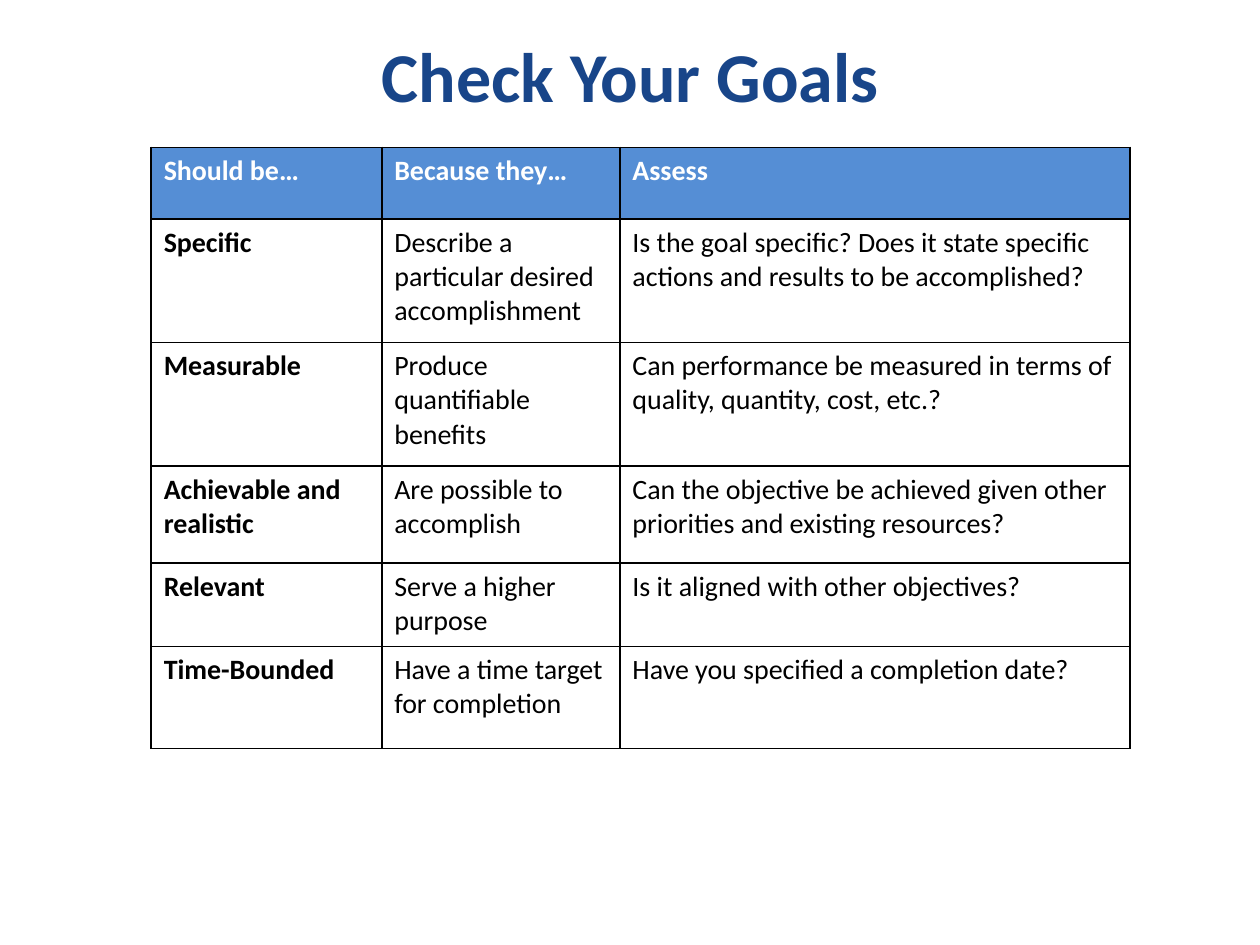
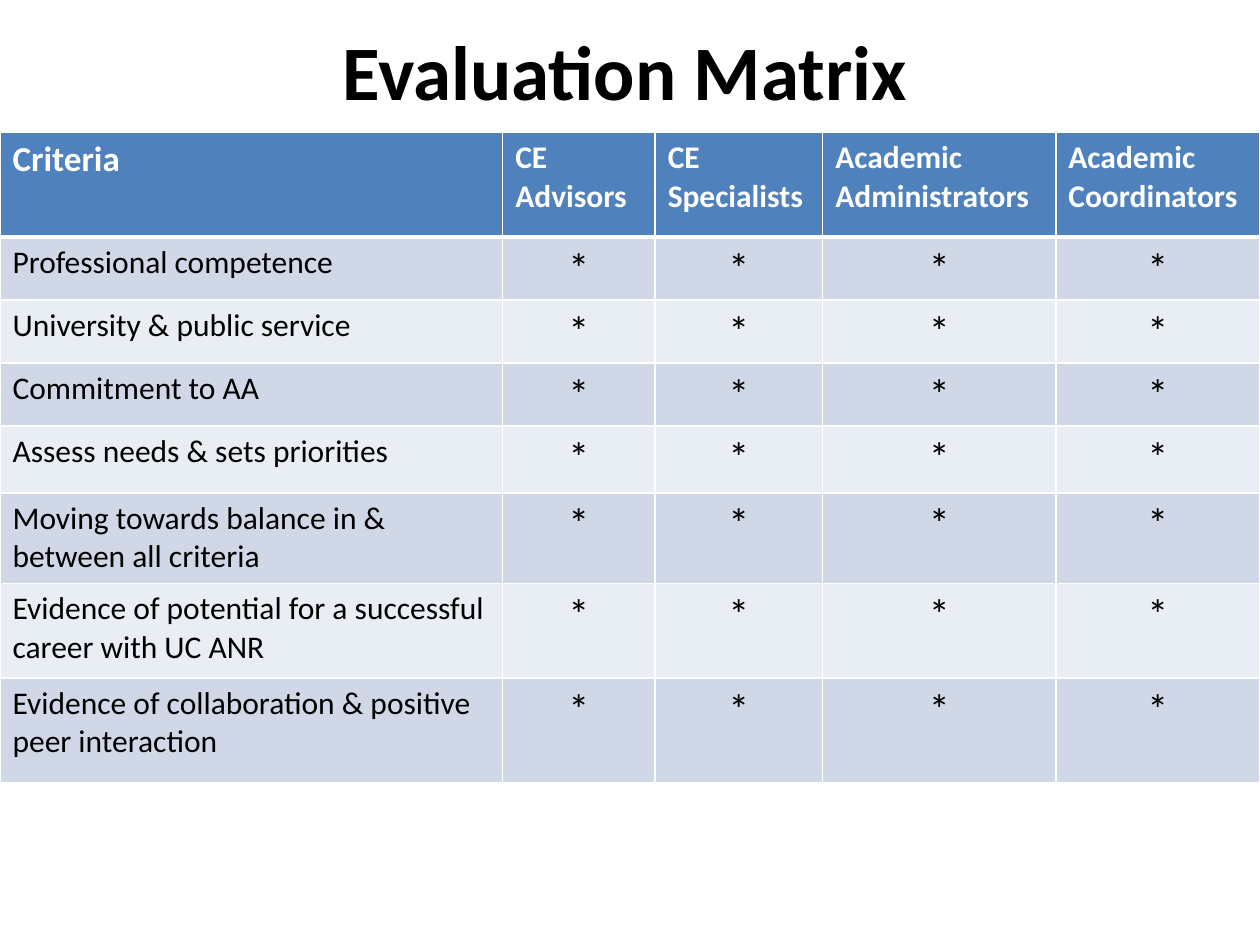
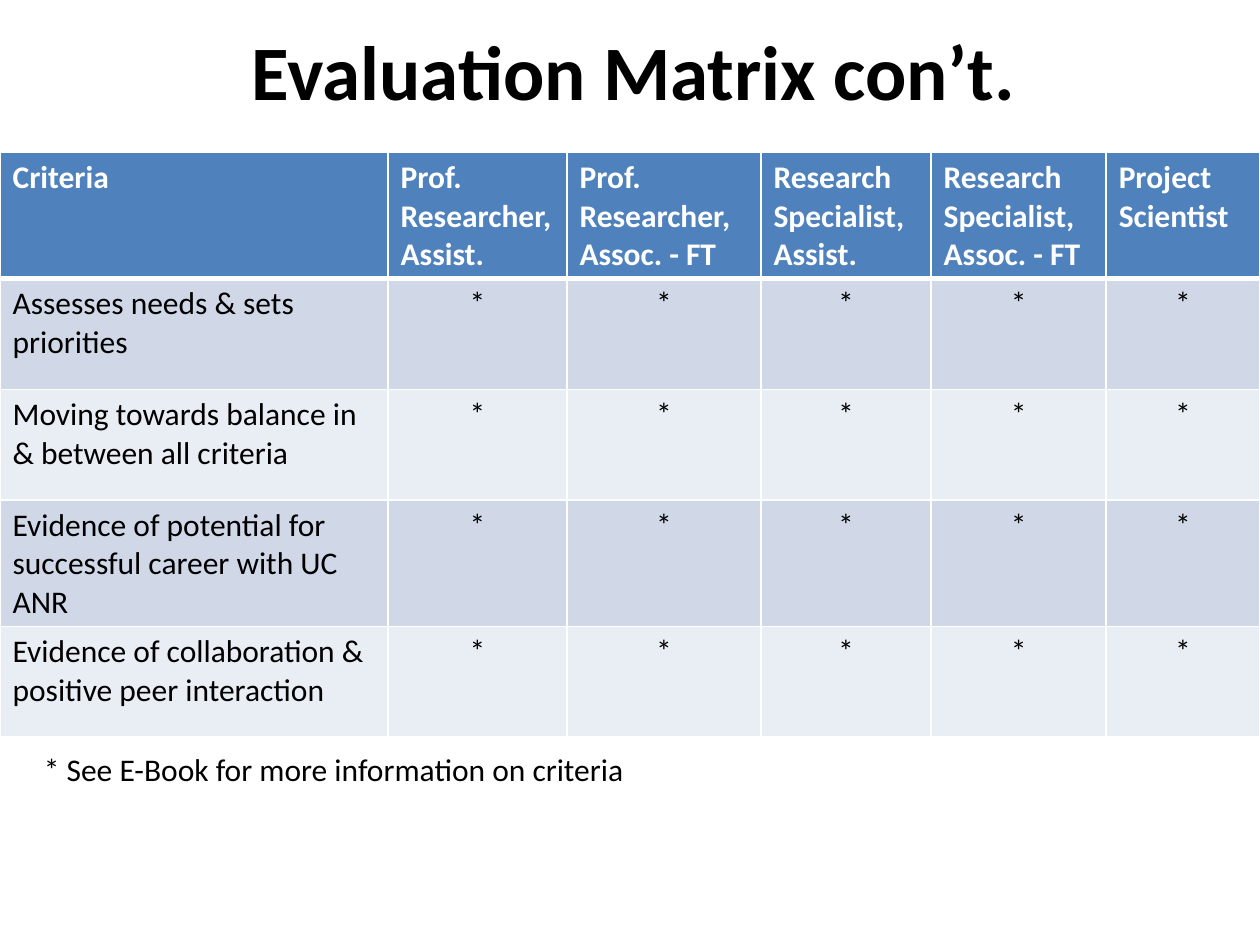
from dataclasses import dataclass

from lxml import etree
from pptx import Presentation
from pptx.dml.color import RGBColor
from pptx.enum.text import MSO_ANCHOR, MSO_AUTO_SIZE, PP_ALIGN
from pptx.oxml.ns import qn
from pptx.util import Inches, Pt

LEFT, CENTER = PP_ALIGN.LEFT, PP_ALIGN.CENTER
MIDDLE, TOP = MSO_ANCHOR.MIDDLE, MSO_ANCHOR.TOP
GROW = MSO_AUTO_SIZE.SHAPE_TO_FIT_TEXT

FONT = "Calibri"
BLACK, WHITE, NAVY = "000000", "FFFFFF", "184589"
MATRIX_BANDS = ("D0D8E8", "E9EDF4")
MARK = "*"


@dataclass(frozen=True)
class TextStyle:
    size: float
    color: str = BLACK
    bold: bool = False
    align: PP_ALIGN = LEFT


@dataclass(frozen=True)
class TableDesign:
    header_fill: str
    bands: tuple[str, ...]
    border: str
    header_rule: float
    header: TextStyle
    corner: TextStyle
    first_column: TextStyle
    body: TextStyle


@dataclass(frozen=True)
class TableLayout:
    left: float
    top: float
    columns: list[float]
    rows: list[float]


GOALS_DESIGN = TableDesign(
    "558ED5", (), BLACK, 1,
    header=TextStyle(16, WHITE, True), corner=TextStyle(16, WHITE, True),
    first_column=TextStyle(16, bold=True), body=TextStyle(16))


def matrix_design(corner_size: float, mark_size: float) -> TableDesign:
    return TableDesign(
        "4F81BD", MATRIX_BANDS, WHITE, 3,
        header=TextStyle(18, WHITE, True), corner=TextStyle(corner_size, WHITE, True),
        first_column=TextStyle(18), body=TextStyle(mark_size, align=CENTER))


GOALS = [
    ["Should be…", "Because they…", "Assess"],
    ["Specific", "Describe a particular desired accomplishment",
     "Is the goal specific? Does it state specific actions and results to be accomplished?"],
    ["Measurable", "Produce quantifiable benefits",
     "Can performance be measured in terms of quality, quantity, cost, etc.?"],
    ["Achievable and realistic", "Are possible to accomplish",
     "Can the objective be achieved given other priorities and existing resources?"],
    ["Relevant", "Serve a higher purpose", "Is it aligned with other objectives?"],
    ["Time-Bounded", "Have a time target for completion",
     "Have you specified a completion date?"],
]
ACADEMIC_ROLES = ["CE Advisors", "CE Specialists",
                  "Academic Administrators", "Academic Coordinators"]
ACADEMIC_CRITERIA = [
    "Professional competence",
    "University & public service",
    "Commitment to AA",
    "Assess needs & sets priorities",
    "Moving towards balance in & between all criteria",
    "Evidence of potential for a successful career with UC ANR",
    "Evidence of collaboration & positive peer interaction",
]
RESEARCH_ROLES = ["Prof. Researcher, Assist.", "Prof. Researcher, Assoc. - FT",
                  "Research Specialist, Assist.", "Research Specialist, Assoc. - FT",
                  "Project Scientist"]
RESEARCH_CRITERIA = [
    "Assesses needs & sets priorities",
    "Moving towards balance in & between all criteria",
    "Evidence of potential for successful career with UC ANR",
    "Evidence of collaboration & positive peer interaction",
]


def rgb(color: str) -> RGBColor:
    return RGBColor.from_string(color)


def write(text_frame, text: str, style: TextStyle) -> None:
    text_frame.text = text
    para = text_frame.paragraphs[0]
    para.alignment = style.align
    font = para.runs[0].font
    font.name, font.size, font.bold = FONT, Pt(style.size), style.bold
    font.color.rgb = rgb(style.color)


def add_text(page, left: float, top: float, width: float, height: float, text: str,
             style: TextStyle, anchor=TOP, wrap: bool = True, grow: bool = True) -> None:
    box = page.shapes.add_textbox(Inches(left), Inches(top), Inches(width), Inches(height))
    frame = box.text_frame
    write(frame, text, style)
    frame.word_wrap, frame.vertical_anchor = wrap, anchor
    if grow:
        frame.auto_size = GROW


def add_matrix_title(page, left: float, width: float, text: str) -> None:
    add_text(page, left, 0.14, width, 0.84, text, TextStyle(44, bold=True))


def set_borders(cell, color: str, top: float, bottom: float) -> None:
    """Outline a cell; call before filling it, since borders precede the fill in XML."""
    properties = cell._tc.get_or_add_tcPr()
    for side, width in (("L", 1), ("R", 1), ("T", top), ("B", bottom)):
        line = etree.SubElement(properties, qn(f"a:ln{side}"), w=str(Pt(width)))
        solid = etree.SubElement(line, qn("a:solidFill"))
        etree.SubElement(solid, qn("a:srgbClr"), val=color)


def cell_style(design: TableDesign, row: int, column: int) -> TextStyle:
    if row == 0:
        return design.header if column else design.corner
    return design.body if column else design.first_column


def cell_fill(design: TableDesign, row: int) -> str | None:
    if row == 0:
        return design.header_fill
    return design.bands[(row - 1) % len(design.bands)] if design.bands else None


def add_grid(page, layout: TableLayout, content: list[list[str]], design: TableDesign) -> None:
    table = page.shapes.add_table(
        len(layout.rows), len(layout.columns), Inches(layout.left), Inches(layout.top),
        Inches(sum(layout.columns)), Inches(sum(layout.rows))).table
    table.horz_banding = False
    for column, width in zip(table.columns, layout.columns):
        column.width = Inches(width)
    for row_index, (height, texts) in enumerate(zip(layout.rows, content)):
        table.rows[row_index].height = Inches(height)
        fill = cell_fill(design, row_index)
        for column_index, text in enumerate(texts):
            cell = table.cell(row_index, column_index)
            write(cell.text_frame, text, cell_style(design, row_index, column_index))
            set_borders(cell, design.border,
                        top=design.header_rule if row_index == 1 else 1,
                        bottom=design.header_rule if row_index == 0 else 1)
            if fill:
                cell.fill.solid()
                cell.fill.fore_color.rgb = rgb(fill)
            else:
                cell.fill.background()


def matrix_content(roles: list[str], criteria: list[str]) -> list[list[str]]:
    """Every criterion is marked for every role."""
    return [["Criteria", *roles]] + [[name] + [MARK] * len(roles) for name in criteria]


def add_page(deck):
    return deck.slides.add_slide(deck.slide_layouts[6])


def build_goals(deck) -> None:
    page = add_page(deck)
    layout = TableLayout(1.2, 1.17, [1.83, 1.89, 4.05], [0.57, 0.98, 0.98, 0.77, 0.66, 0.81])
    add_grid(page, layout, GOALS, GOALS_DESIGN)
    add_text(page, 0.59, 0.25, 8.82, 0.68, "Check Your Goals",
             TextStyle(40, NAVY, True, CENTER), anchor=MIDDLE, grow=False)


def build_academic_matrix(deck) -> None:
    page = add_page(deck)
    add_matrix_title(page, 2.62, 7.29, "Evaluation Matrix")
    layout = TableLayout(0, 1.05, [3.99, 1.21, 1.33, 1.85, 1.62],
                         [0.83, 0.5, 0.5, 0.5, 0.53, 0.72, 0.75, 0.83])
    add_grid(page, layout, matrix_content(ACADEMIC_ROLES, ACADEMIC_CRITERIA),
             matrix_design(corner_size=20, mark_size=24))


def build_research_matrix(deck) -> None:
    page = add_page(deck)
    layout = TableLayout(0, 1.21, [3.08, 1.42, 1.54, 1.35, 1.39, 1.22],
                         [1, 0.88, 0.88, 1, 0.88])
    add_grid(page, layout, matrix_content(RESEARCH_ROLES, RESEARCH_CRITERIA),
             matrix_design(corner_size=18, mark_size=18))
    add_matrix_title(page, 1.9, 9.23, "Evaluation Matrix con’t.")
    add_text(page, 0.25, 5.9, 4.86, 0.4, "* See E-Book for more information on criteria",
             TextStyle(18), wrap=False)


def main() -> None:
    deck = Presentation()
    deck.slide_width, deck.slide_height = Inches(10), Inches(7.5)
    build_goals(deck)
    build_academic_matrix(deck)
    build_research_matrix(deck)
    deck.save("out.pptx")


if __name__ == "__main__":
    main()
